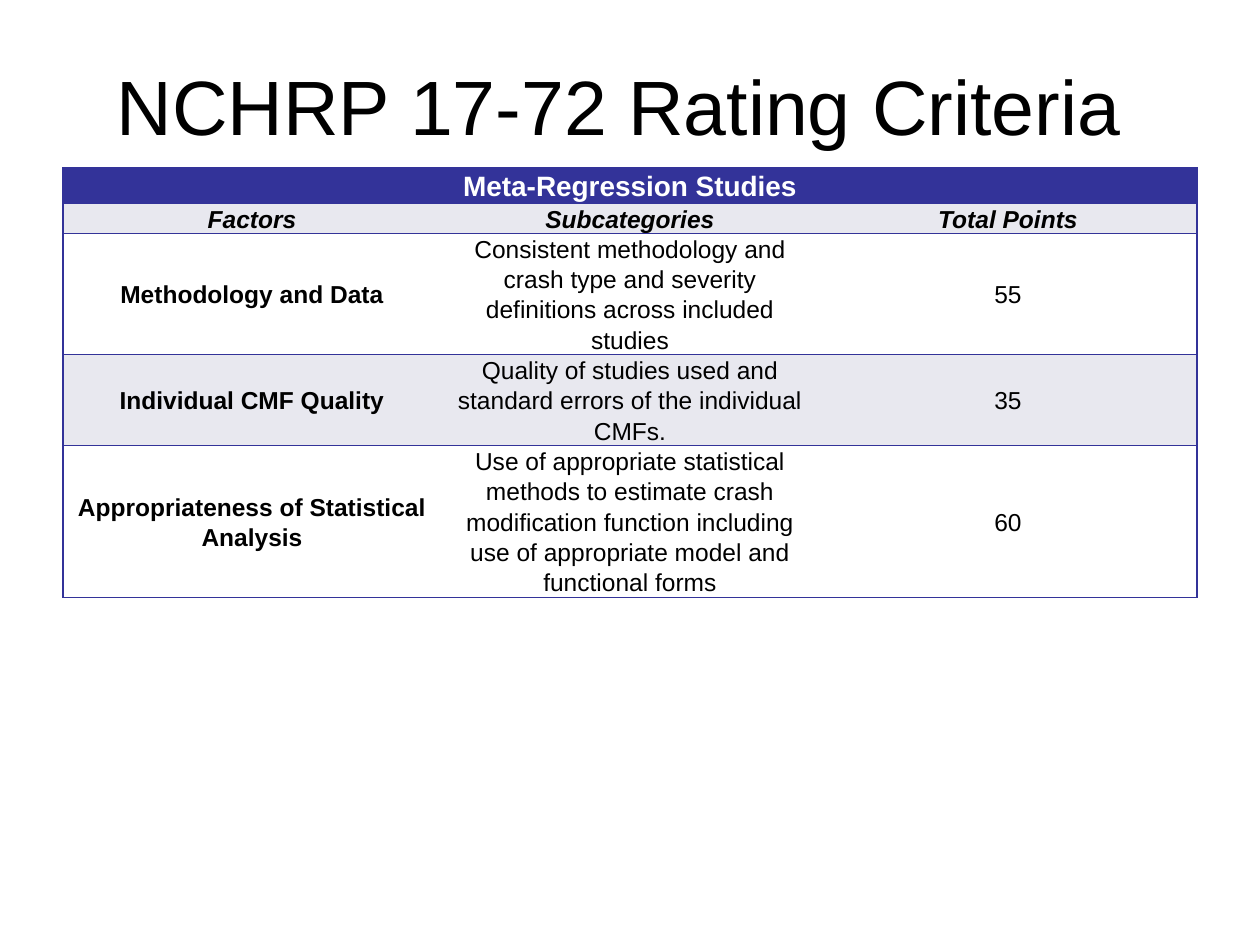
from lxml import etree
from pptx import Presentation
from pptx.dml.color import RGBColor
from pptx.enum.text import MSO_ANCHOR, PP_ALIGN
from pptx.oxml.ns import qn
from pptx.util import Emu, Pt

CENTER = PP_ALIGN.CENTER
MIDDLE = MSO_ANCHOR.MIDDLE
NAVY = RGBColor(0x33, 0x33, 0x99)
PALE = RGBColor(0xE8, 0xE8, 0xEF)
WHITE = RGBColor(0xFF, 0xFF, 0xFF)
BLACK = RGBColor(0, 0, 0)
FONT = "Arial"
TITLE_ONLY = 5
SCALE = 914400 / 126

HEAD = "Meta-Regression Studies"
ROWS = [
    ("Factors", "Subcategories", "Total Points"),
    ("Methodology and Data",
     "Consistent methodology and crash type and severity definitions "
     "across included studies", "55"),
    ("Individual CMF Quality",
     "Quality of studies used and standard errors of the individual CMFs.",
     "35"),
    ("Appropriateness of Statistical Analysis",
     "Use of appropriate statistical methods to estimate crash modification "
     "function including use of appropriate model and functional forms",
     "60"),
]
HEIGHTS = [35, 30, 121, 91, 152]


def px(n):
    return Emu(round(n * SCALE))


def set_font(para, size, color, bold=False, italic=False):
    para.alignment = CENTER
    font = para.font
    font.name, font.size = FONT, Pt(size)
    font.bold, font.italic = bold, italic
    font.color.rgb = color


def add_edges(cell, shown):
    """Draw the sides named in shown (of L, R, T, B) and clear the others."""
    props = cell._tc.get_or_add_tcPr()
    for side in "LRTB":
        line = etree.SubElement(props, qn(f"a:ln{side}"), w=str(Pt(1)))
        if side in shown:
            fill = etree.SubElement(line, qn("a:solidFill"))
            etree.SubElement(fill, qn("a:srgbClr"), val=str(NAVY))
        else:
            etree.SubElement(line, qn("a:noFill"))


def fill_cell(cell, text, fill, edges, size=14, color=BLACK,
              bold=False, italic=False):
    add_edges(cell, edges)
    cell.fill.solid()
    cell.fill.fore_color.rgb = fill
    cell.vertical_anchor = MIDDLE
    cell.margin_left = cell.margin_right = px(9)
    cell.margin_top = cell.margin_bottom = 0
    cell.text = text
    para = cell.text_frame.paragraphs[0]
    para.line_spacing = 1.1
    para.space_after = Pt(6)
    set_font(para, size, color, bold, italic)


def add_title(slide, x, y, w, h):
    title = slide.shapes.title
    title.left, title.top, title.width, title.height = map(px, (x, y, w, h))
    frame = title.text_frame
    frame.text = "NCHRP 17-72 Rating Criteria"
    frame.vertical_anchor = MIDDLE
    set_font(frame.paragraphs[0], 44, BLACK)


def add_ratings(slide, x, y, w):
    table = slide.shapes.add_table(
        len(HEIGHTS), 3, px(x), px(y), px(w), px(sum(HEIGHTS))).table
    for col in table.columns:
        col.width = px(w / 3)
    for row, high in zip(table.rows, HEIGHTS):
        row.height = px(high)

    table.cell(0, 0).merge(table.cell(0, 2))
    fill_cell(table.cell(0, 0), HEAD, NAVY, "LRTB", 16, WHITE, bold=True)
    for r, texts in enumerate(ROWS, 1):
        for c, text in enumerate(texts):
            fill_cell(table.cell(r, c), text, PALE if r % 2 else WHITE,
                      ("LTB", "TB", "RTB")[c],
                      bold=r == 1 or c == 0, italic=r == 1)


def main():
    deck = Presentation()
    deck.slide_width, deck.slide_height = px(1260), px(945)
    slide = deck.slides.add_slide(deck.slide_layouts[TITLE_ONLY])
    add_title(slide, 31, 42, 1176, 126)
    add_ratings(slide, 63, 168, 1134)
    deck.save("out.pptx")


if __name__ == "__main__":
    main()
